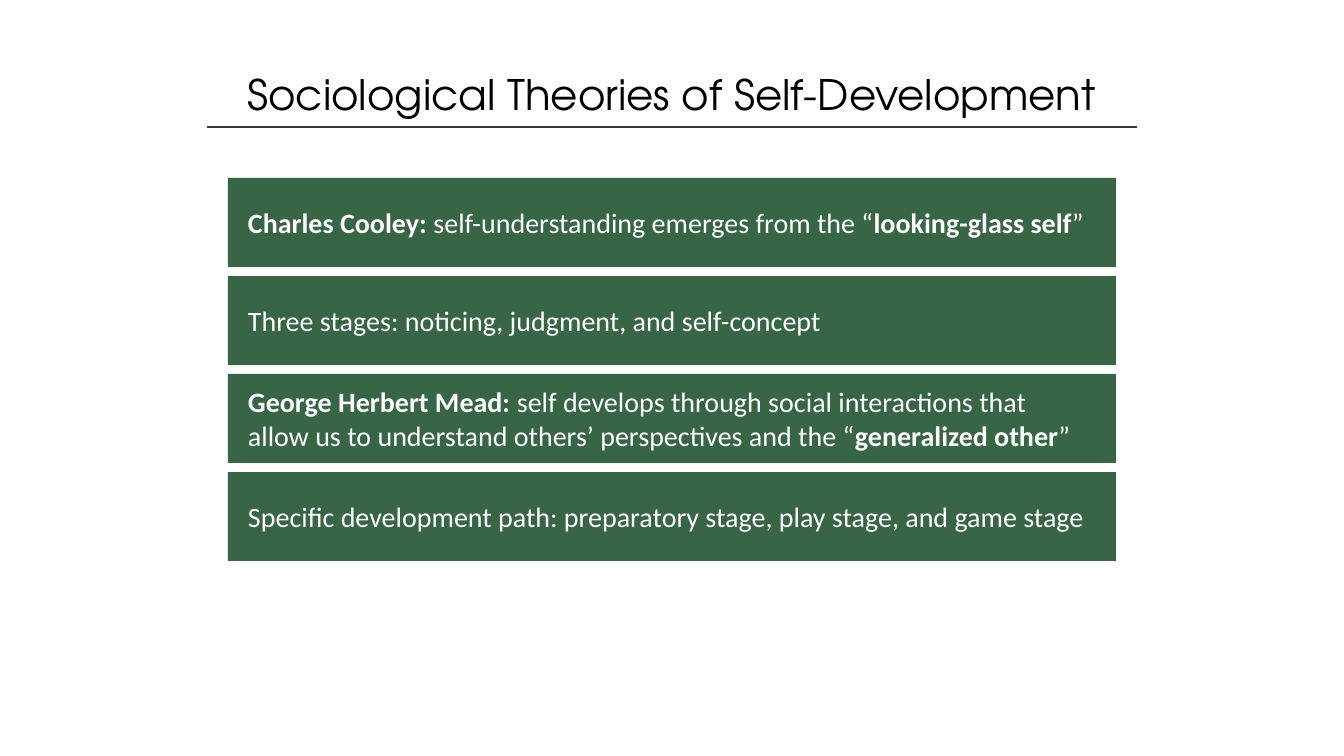
from pptx import Presentation
from pptx.dml.color import RGBColor
from pptx.enum.shapes import MSO_CONNECTOR, MSO_SHAPE
from pptx.enum.text import MSO_ANCHOR, PP_ALIGN
from pptx.oxml.ns import qn
from pptx.util import Pt
from lxml.etree import SubElement

# Content: each panel is a list of (text, bold) runs
TITLE = "Sociological Theories of Self-Development"
PANELS = [
    [("Charles Cooley: ", True),
     ("self-understanding emerges from the “", False),
     ("looking-glass self", True), ("”", False)],
    [("Three stages: noticing, judgment, and self-concept", False)],
    [("George Herbert Mead: ", True),
     ("self develops through social interactions that allow us to "
      "understand others’ perspectives and the “", False),
     ("generalized other", True), ("”", False)],
    [("Specific development path: preparatory stage, play stage, "
      "and game stage", False)],
]

TITLE_FONT, BODY_FONT = "TeX Gyre Adventor", "Calibri"
BLACK = RGBColor(0x00, 0x00, 0x00)
WHITE = RGBColor(0xFF, 0xFF, 0xFF)
GREEN = RGBColor(0x38, 0x65, 0x46)
SLATE = RGBColor(0x32, 0x35, 0x42)

# Layout in px
WIDTH, HEIGHT = 1344, 756
PANEL_X, PANEL_Y, PANEL_W, PANEL_H, PANEL_GAP = 228, 178, 888, 89, 9
INSET_LEFT, INSET_RIGHT = 20, 27
RULE_X, RULE_Y = 207, 127


def px(n):
    return round(n * 914400 / 100.8)


def set_font(r, name, size, color, bold=False):
    r.font.name, r.font.size, r.font.bold = name, Pt(size), bold
    r.font.color.rgb = color


prs = Presentation()
prs.slide_width, prs.slide_height = px(WIDTH), px(HEIGHT)
s = prs.slides.add_slide(prs.slide_layouts[6])

# Title
tf = s.shapes.add_textbox(px(168), px(64), px(1008), px(61)).text_frame
tf.word_wrap = True
p = tf.paragraphs[0]
p.text = TITLE
p.alignment = PP_ALIGN.CENTER
set_font(p.runs[0], TITLE_FONT, 30, BLACK)

# Rule under the title
rule = s.shapes.add_connector(MSO_CONNECTOR.STRAIGHT, px(RULE_X), px(RULE_Y),
                              px(WIDTH - RULE_X), px(RULE_Y))
rule.line.color.rgb = SLATE
rule.line.width = Pt(1)
SubElement(rule._element.spPr, qn("a:effectLst"))

# Panels
for i, parts in enumerate(PANELS):
    y = PANEL_Y + i * (PANEL_H + PANEL_GAP)
    sp = s.shapes.add_shape(MSO_SHAPE.RECTANGLE, px(PANEL_X), px(y),
                            px(PANEL_W), px(PANEL_H))
    sp.shadow.inherit = False
    sp.fill.solid()
    sp.fill.fore_color.rgb = GREEN
    sp.line.fill.background()
    tf = sp.text_frame
    tf.word_wrap = True
    tf.vertical_anchor = MSO_ANCHOR.MIDDLE
    tf.margin_left, tf.margin_right = px(INSET_LEFT), px(INSET_RIGHT)
    p = tf.paragraphs[0]
    p.alignment = PP_ALIGN.LEFT
    for text, bold in parts:
        r = p.add_run()
        r.text = text
        set_font(r, BODY_FONT, 20, WHITE, bold)

prs.save("out.pptx")
